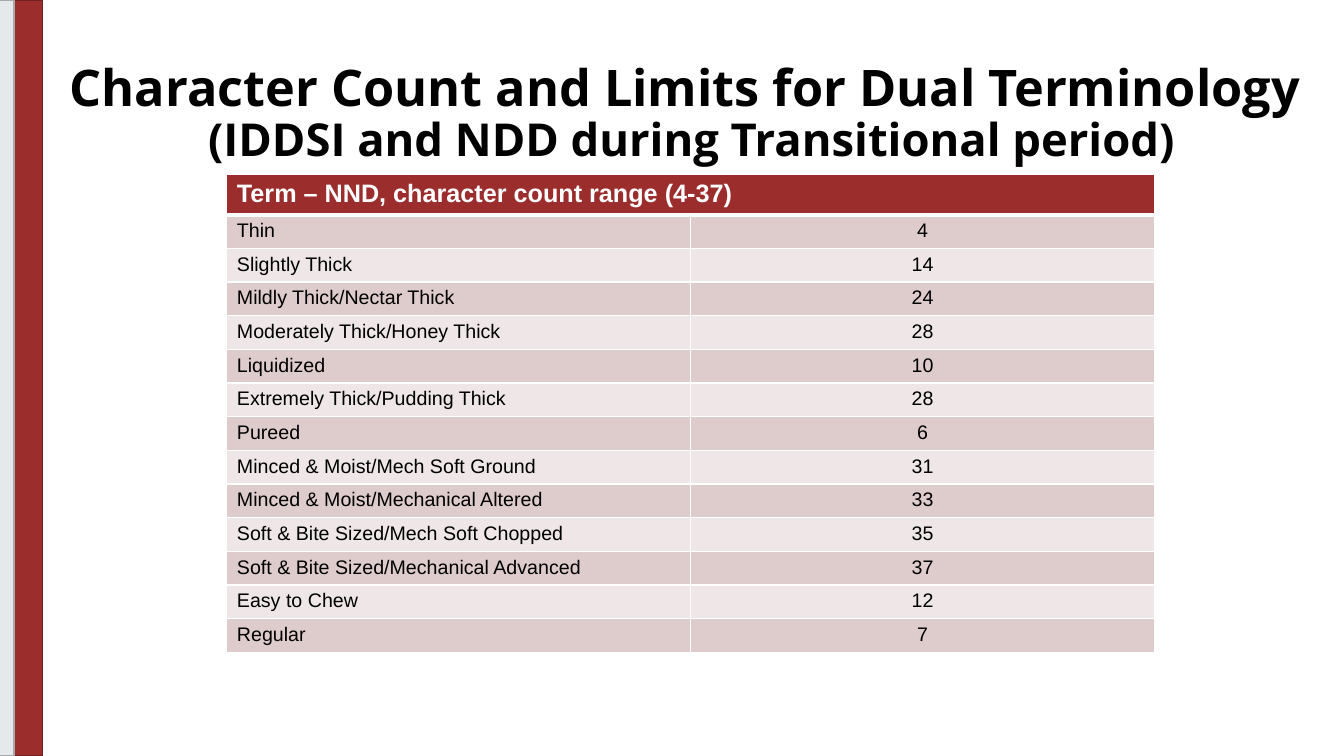
from lxml.etree import SubElement
from pptx import Presentation
from pptx.dml.color import RGBColor
from pptx.enum.shapes import MSO_SHAPE
from pptx.enum.text import MSO_ANCHOR, PP_ALIGN
from pptx.oxml.ns import qn
from pptx.util import Inches, Pt

WIDE, HIGH = 13.33, 7.5
RED, WHITE, BLACK = "9B2D2D", "FFFFFF", "000000"
BANDS = ["DECCCC", "EFE7E7"]
TITLE = ("Character Count and Limits for Dual Terminology \v"
         "(IDDSI and NDD during Transitional period)")
HEAD = "Term – NND, character count range (4-37)"
TERMS = [
    ("Thin", 4),
    ("Slightly Thick", 14),
    ("Mildly Thick/Nectar Thick", 24),
    ("Moderately Thick/Honey Thick", 28),
    ("Liquidized", 10),
    ("Extremely Thick/Pudding Thick", 28),
    ("Pureed", 6),
    ("Minced & Moist/Mech Soft Ground", 31),
    ("Minced & Moist/Mechanical Altered", 33),
    ("Soft & Bite Sized/Mech Soft Chopped", 35),
    ("Soft & Bite Sized/Mechanical Advanced", 37),
    ("Easy to Chew", 12),
    ("Regular", 7),
]


def paint(part, color):
    part.fill.solid()
    part.fill.fore_color.rgb = RGBColor.from_string(color)


def style(run, face, size, color, bold):
    font = run.font
    font.name, font.size, font.bold = face, Pt(size), bold
    font.color.rgb = RGBColor.from_string(color)


def add_bars(slide, box):
    left, top, width, height = box
    bars = [(0.07, 0.93, RED, "712020"), (0, 0.38, "E5E9EC", "A7AAAC")]
    for start, share, color, edge in bars:
        bar = slide.shapes.add_shape(
            MSO_SHAPE.RECTANGLE, Inches(left + start * width), Inches(top),
            Inches(share * width), Inches(height))
        bar.shadow.inherit = False
        paint(bar, color)
        bar.line.color.rgb = RGBColor.from_string(edge)
        bar.line.width = Pt(1)


def add_title(slide, box):
    frame = slide.shapes.add_textbox(*map(Inches, box)).text_frame
    frame.word_wrap = True
    frame.vertical_anchor = MSO_ANCHOR.MIDDLE
    para = frame.paragraphs[0]
    para.text = TITLE
    para.alignment = PP_ALIGN.CENTER
    para.line_spacing = 0.9
    for run, size in zip(para.runs, (36, 32.4)):
        style(run, "Open Sans", size, BLACK, True)


def add_edges(cell, top, low):
    props = cell._tc.get_or_add_tcPr()
    sides = [("a:lnL", 1), ("a:lnR", 1), ("a:lnT", top), ("a:lnB", low)]
    for spot, (tag, width) in enumerate(sides):
        line = SubElement(props, qn(tag), w=str(Pt(width)))
        fill = SubElement(line, qn("a:solidFill"))
        SubElement(fill, qn("a:srgbClr"), val=WHITE)
        props.insert(spot, line)


def fill_cell(cell, text, size, color, back, align, top, low):
    paint(cell, back)
    add_edges(cell, top, low)
    para = cell.text_frame.paragraphs[0]
    para.text = str(text)
    para.alignment = align
    for run in para.runs:
        style(run, "Arial", size, color, size == 18)


def add_terms(slide, box):
    left, top, width, height = box
    grid = slide.shapes.add_table(
        len(TERMS) + 1, 2, *map(Inches, box)).table
    first = 0.38
    step = (height - first) / len(TERMS)
    for col in grid.columns:
        col.width = Inches(width / 2)
    for spot, row in enumerate(grid.rows):
        row.height = Inches(step if spot else first)
    grid.cell(0, 0).merge(grid.cell(0, 1))
    for col, text in enumerate((HEAD, "")):
        fill_cell(grid.cell(0, col), text, 18, WHITE, RED,
                  PP_ALIGN.LEFT, 1, 3)
    for row, term in enumerate(TERMS, 1):
        for col, text in enumerate(term):
            fill_cell(grid.cell(row, col), text, 14, BLACK,
                      BANDS[(row - 1) % 2],
                      PP_ALIGN.CENTER if col else PP_ALIGN.LEFT,
                      3 if row == 1 else 1, 1)


def main():
    deck = Presentation()
    deck.slide_width, deck.slide_height = Inches(WIDE), Inches(HIGH)
    slide = deck.slides.add_slide(deck.slide_layouts[6])
    add_bars(slide, (-0.03, 0, 0.45, HIGH))
    add_title(slide, (0.38, 0.41, 12.96, 1.45))
    add_terms(slide, (2.25, 1.73, 9.2, 4.53))
    deck.save("out.pptx")


if __name__ == "__main__":
    main()
